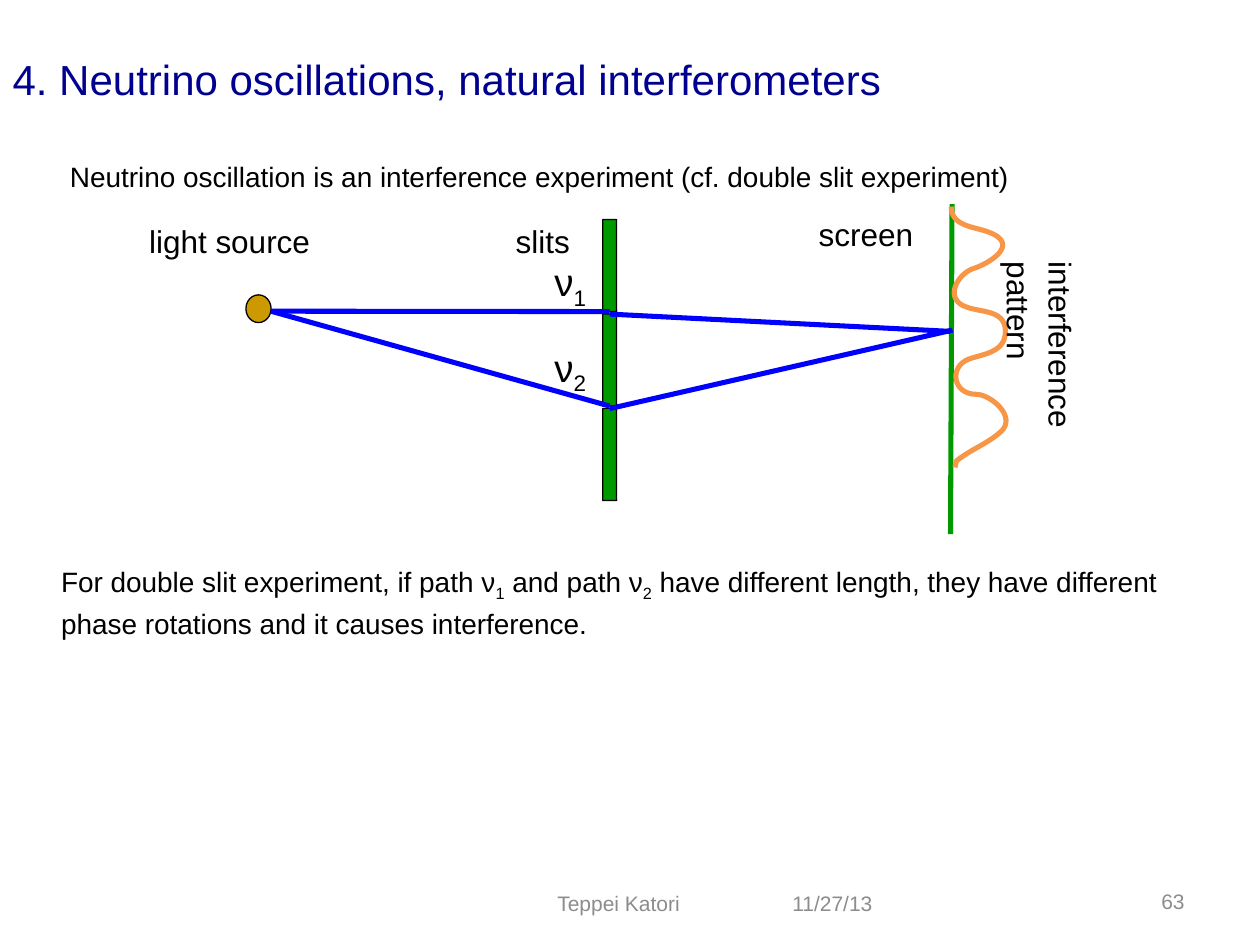
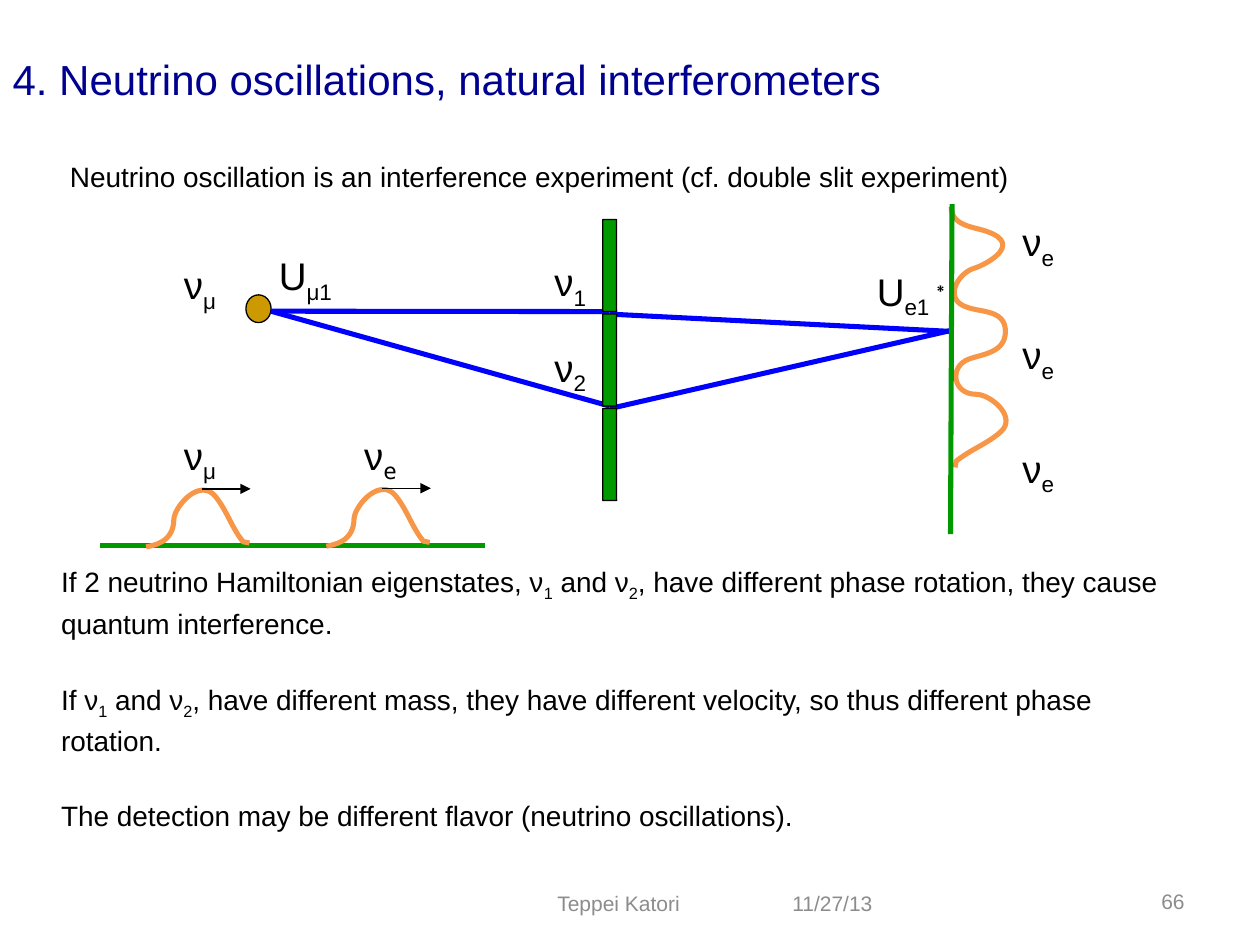
from lxml import etree
from pptx import Presentation
from pptx.dml.color import RGBColor as RGB
from pptx.enum.shapes import MSO_CONNECTOR as CONN, MSO_SHAPE as SHAPE
from pptx.enum.text import MSO_ANCHOR as ANCHOR, PP_ALIGN as ALIGN
from pptx.oxml.ns import qn
from pptx.util import Inches, Pt

COLS, ROWS = 100, 75
COLORS = {"title": "000090", "text": "000000", "footer": "8C8C8C", "source": "CC9900",
          "screen": "009900", "beam": "0000FF", "wave": "F79646"}
FONT, MONO = "Arial", "DejaVu Sans Mono"
THICK, THIN = 2.89, 0.75
BASELINES = {"_": "-25000", "^": "30000"}

SLITS = [17.43 + 7.5 * i for i in range(3)]
PATTERN = [
    (75.5, 16.4),
    (75.5, 18), (77.4, 18), (78.4, 18.4),
    (81.2, 19.4), (78.3, 21), (77.3, 21.3),
    (76, 21.7), (74.8, 23.8), (76.8, 24.4),
    (77.9, 24.8), (79.8, 24.6), (79.8, 26.3),
    (79.8, 28), (78, 28.1), (76.9, 28.5),
    (75.3, 29.1), (75.6, 31.3), (77.5, 31.3),
    (78.6, 31.3), (80.8, 33.1), (79.4, 34.3),
    (78.4, 35.2), (77, 35.7), (75.9, 36.6),
    (75.8, 37.1),
]
PACKET = [
    (0, 5.5),
    (0.5, 5.4), (2.2, 5.2), (2.2, 3.3),
    (2.3, 2.2), (4.3, 0), (5.5, 1.5),
    (6.4, 2.6), (6.8, 4), (7.7, 5.1),
    (8.2, 5.2),
]


class Deck:
    def __init__(self):
        self.prs = Presentation()
        self.prs.slide_width, self.prs.slide_height = Inches(10), Inches(7.5)
        self.s = None

    def x(self, cols):
        return round(self.prs.slide_width * cols / COLS)

    def y(self, rows):
        return round(self.prs.slide_height * rows / ROWS)

    def box(self, left, top, width, height):
        return self.x(left), self.y(top), self.x(width), self.y(height)

    def style(self, p, size, color, align=ALIGN.LEFT):
        p.alignment = align
        p.font.name, p.font.size = FONT, Pt(size)
        p.font.color.rgb = RGB.from_string(COLORS[color])

    def stroke(self, sp, color, width):
        sp.line.color.rgb = RGB.from_string(COLORS[color])
        sp.line.width = Pt(width)

    def new_slide(self, title):
        self.s = self.prs.slides.add_slide(self.prs.slide_layouts[5])
        sp = self.s.shapes.title
        sp.left, sp.top, sp.width, sp.height = self.box(0, 0, COLS, 12.5)
        tf = sp.text_frame
        tf.text, tf.vertical_anchor = title, ANCHOR.MIDDLE
        self.style(tf.paragraphs[0], 24, "title")

    def text(self, at, paragraphs, size, gap=0, rotation=0):
        sp = self.s.shapes.add_textbox(*self.box(*at))
        sp.rotation = rotation
        tf = sp.text_frame
        tf.word_wrap = True
        tf.margin_left = tf.margin_right = tf.margin_top = tf.margin_bottom = 0
        for i, content in enumerate(paragraphs):
            p = tf.add_paragraph() if i else tf.paragraphs[0]
            p.line_spacing = 1.11
            if i:
                p.space_before = Pt(gap)
            for piece in content.split("|"):
                r = p.add_run()
                r.text = piece.lstrip("_^")
                if piece[0] in BASELINES:
                    r.font._element.set("baseline", BASELINES[piece[0]])
            self.style(p, size, "text")
        return sp

    def symbol(self, left, top, content, width=3.8):
        return self.text((left, top, width, 4), [content], 22)

    def footer(self, at, content, align):
        sp = self.s.shapes.add_textbox(*self.box(*at))
        tf = sp.text_frame
        tf.word_wrap = True
        tf.text, tf.vertical_anchor = content, ANCHOR.MIDDLE
        self.style(tf.paragraphs[0], 12, "footer", align)

    def shape(self, kind, at, color):
        sp = self.s.shapes.add_shape(kind, *self.box(*at))
        sp.shadow.inherit = False
        sp.fill.solid()
        sp.fill.fore_color.rgb = RGB.from_string(COLORS[color])
        self.stroke(sp, "text", THIN)
        return sp

    def line(self, start, end, color, width=THICK, arrow=False):
        sp = self.s.shapes.add_connector(CONN.STRAIGHT, self.x(start[0]), self.y(start[1]),
                                         self.x(end[0]), self.y(end[1]))
        self.stroke(sp, color, width)
        if arrow:
            etree.SubElement(sp.line._get_or_add_ln(), qn("a:tailEnd"), type="triangle")
        etree.SubElement(sp._element.spPr, qn("a:effectLst"))
        return sp

    def wave(self, points, left=0, top=0):
        (x, y), *rest = [(self.x(left + a), self.y(top + b)) for a, b in points]
        builder = self.s.shapes.build_freeform(x, y)
        builder.add_line_segments(rest, close=False)
        sp = builder.convert_to_shape()
        segments = list(sp._element.iter(qn("a:lnTo")))
        for i in range(0, len(segments) - 1, 3):
            curve = etree.Element(qn("a:cubicBezTo"))
            segments[i].addprevious(curve)
            for segment in segments[i:i + 3]:
                curve.append(segment[0])
                segment.getparent().remove(segment)
        sp.shadow.inherit = False
        sp.fill.background()
        self.stroke(sp, "wave", THICK)

    def to_front(self, *shapes):
        for sp in shapes:
            self.s.shapes._spTree.append(sp._element)

    def interferometer(self):
        self.shape(SHAPE.OVAL, (19.52, 23.4, 2, 2.2), "source")
        screen = self.line((75.56, 16.2), (75.44, 42.4), "screen")
        slits = [self.shape(SHAPE.ROUNDED_RECTANGLE, (47.84, top, 1.1, 7.3), "screen") for top in SLITS]
        for sp in slits:
            sp.adjustments[0] = 0.015
        self.wave(PATTERN)
        for i, hit in enumerate([(75.4, 26.3), (75.6, 26.2)]):
            gap = (48.4, SLITS[i + 1])
            self.line((21.5, 24.7), gap, "beam").end_connect(slits[i], 2)
            self.line(gap, hit, "beam").begin_connect(slits[i + 1], 0)
            self.symbol(44, 20.03 + 6.8 * i, f"ν|_{i + 1}")
        return [screen, *slits]

    def packet(self, left, top, flavor):
        self.wave(PACKET, left, top)
        self.line((left + 4.4, top + 0.9), (left + 8.3, top + 0.9), "text", THIN, arrow=True)
        return self.symbol(left + 3, 33.8, f"ν|_{flavor}")

    def interference_slide(self, number, body, height):
        self.new_slide("4. Neutrino oscillations, natural interferometers")
        self.text((5.55, 12.4, 86.9, 3),
                  ["Neutrino oscillation is an interference experiment (cf. double slit experiment)"], 16)
        apparatus = self.interferometer()
        self.text((4.85, 44.5, 89.6, height), body, 16, gap=21.5)
        self.footer((61.9, 69.65, 15.2, 4), "11/27/13", ALIGN.LEFT)
        self.footer((38.2, 69.65, 21.8, 4), "Teppei Katori", ALIGN.CENTER)
        self.footer((78.2, 69.5, 16.8, 4), number, ALIGN.RIGHT)
        return apparatus


def double_slit(d):
    d.interference_slide("63", [
        "For double slit experiment, if path ν|_1| and path ν|_2| have different length, "
        "they have different phase rotations and it causes interference."], 5.9)
    for left, top, width, label in [(11.83, 17.3, 14.3, "light source"), (40.93, 17.3, 6.1, "slits"),
                                    (64.97, 16.75, 8.8, "screen")]:
        d.text((left, top, width, 3.3), [label], 18)
    d.text((72.2, 27.93, 21, 6.7), ["interference pattern"], 18, rotation=90)


def neutrino_paths(d):
    apparatus = d.interference_slide("66", [
        "If 2 neutrino Hamiltonian eigenstates, ν|_1| and ν|_2|, have different phase rotation, "
        "they cause quantum interference.",
        "If ν|_1| and ν|_2|, have different mass, they have different velocity, "
        "so thus different phase rotation.",
        "The detection may be different flavor (neutrino oscillations)."], 20.9)
    d.to_front(*apparatus)
    d.symbol(14.6, 20.3, "ν|_μ")
    d.symbol(22.14, 19.55, "U|_μ1", 6)
    d.symbol(69.6, 20.8, "U|_e1|^∗", 6)
    d.text((81.14, 16.85, 3.8, 19.1), ["ν|_e"] * 3, 22, gap=31.5)
    d.line((7.9, 43.3), (38.5, 43.3), "screen")
    d.packet(11.6, 37.9, "μ")
    electron = d.packet(25.9, 37.85, "e")
    electron.text_frame.paragraphs[0].runs[1].font.name = MONO


def main():
    d = Deck()
    double_slit(d)
    neutrino_paths(d)
    d.prs.save("out.pptx")


if __name__ == "__main__":
    main()
